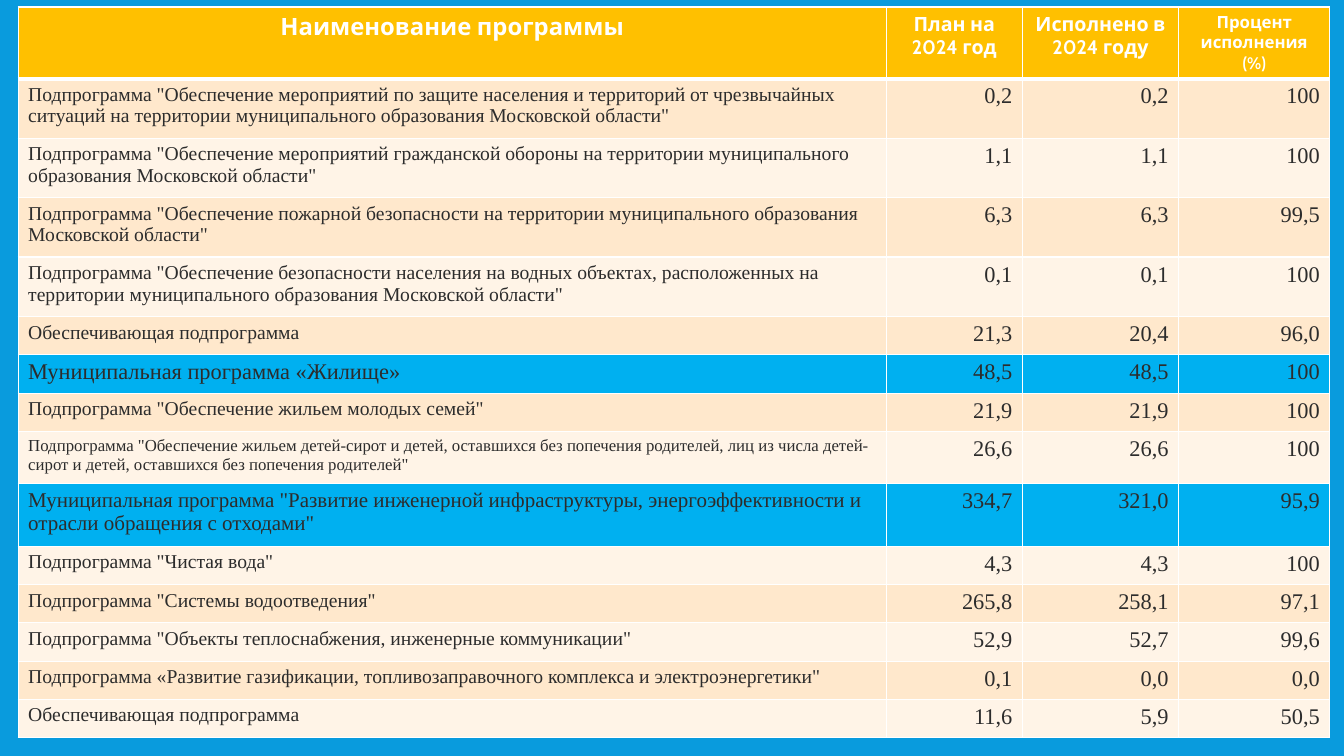
from lxml.etree import SubElement
from pptx import Presentation
from pptx.dml.color import RGBColor
from pptx.enum.text import PP_ALIGN
from pptx.oxml.ns import qn
from pptx.util import Inches, Pt

# Content: column heading, text size, column width
COLUMNS = [
    ("Наименование программы", 17, 8.61),
    ("План на 2024 год", 14, 1.35),
    ("Исполнено в 2024 году", 14, 1.55),
    ("Процент исполнения (%)", 12, 1.5),
]

# Content: name, plan, actual, percent, name size, row height
PROGRAMS = [
    ('Подпрограмма "Обеспечение мероприятий по защите населения и территорий от чрезвычайных '
     'ситуаций на территории муниципального образования Московской области"',
     "0,2", "0,2", "100", 14, 0.59),
    ('Подпрограмма "Обеспечение мероприятий гражданской обороны на территории муниципального '
     'образования Московской области"', "1,1", "1,1", "100", 14, 0.59),
    ('Подпрограмма "Обеспечение пожарной безопасности на территории муниципального образования '
     'Московской области"', "6,3", "6,3", "99,5", 14, 0.59),
    ('Подпрограмма "Обеспечение безопасности населения на водных объектах, расположенных на '
     'территории муниципального образования Московской области"',
     "0,1", "0,1", "100", 14, 0.59),
    ("Обеспечивающая подпрограмма", "21,3", "20,4", "96,0", 14, 0.38),
    ("Муниципальная программа «Жилище»", "48,5", "48,5", "100", 16, 0.38),
    ('Подпрограмма "Обеспечение жильем молодых семей"', "21,9", "21,9", "100", 14, 0.38),
    ('Подпрограмма "Обеспечение жильем детей-сирот и детей, оставшихся без попечения родителей, '
     'лиц из числа детей-сирот и детей, оставшихся без попечения родителей"',
     "26,6", "26,6", "100", 12, 0.52),
    ('Муниципальная программа "Развитие инженерной инфраструктуры, энергоэффективности и '
     'отрасли обращения с отходами"', "334,7", "321,0", "95,9", 15, 0.62),
    ('Подпрограмма "Чистая вода"', "4,3", "4,3", "100", 14, 0.38),
    ('Подпрограмма "Системы водоотведения"', "265,8", "258,1", "97,1", 14, 0.38),
    ('Подпрограмма "Объекты теплоснабжения, инженерные коммуникации"',
     "52,9", "52,7", "99,6", 14, 0.38),
    ('Подпрограмма «Развитие газификации, топливозаправочного комплекса и электроэнергетики"',
     "0,1", "0,0", "0,0", 14, 0.38),
    ("Обеспечивающая подпрограмма", "11,6", "5,9", "50,5", 14, 0.38),
]

HEADER_HEIGHT = 0.59
VALUE_SIZE = 16
BACKGROUND, HEADER_FILL, PROGRAM_FILL = "099BDD", "FFC000", "00B0F0"
BAND_FILLS = ("FFF4E7", "FFE8CC")
WHITE, INK = "FFFFFF", "2C2C2C"


def paint(fill, color):
    fill.solid()
    fill.fore_color.rgb = RGBColor.from_string(color)


def set_borders(cell, bottom_width):
    properties = cell._tc.get_or_add_tcPr()
    sides = [("a:lnL", 1), ("a:lnR", 1), ("a:lnT", 1), ("a:lnB", bottom_width)]
    for side, width in sides:
        line = SubElement(properties, qn(side), w=str(Pt(width)))
        SubElement(SubElement(line, qn("a:solidFill")), qn("a:srgbClr"), val=WHITE)


def fill_cell(cell, text, size, font_name, color, align, fill, bold=False, bottom_width=1):
    set_borders(cell, bottom_width)
    paint(cell.fill, fill)
    paragraph = cell.text_frame.paragraphs[0]
    paragraph.alignment = align
    run = paragraph.add_run()
    run.text = text
    run.font.size = Pt(size)
    run.font.name = font_name
    run.font.bold = bold
    run.font.color.rgb = RGBColor.from_string(color)


# Slide
prs = Presentation()
prs.slide_width, prs.slide_height = Inches(13.33), Inches(7.5)
slide = prs.slides.add_slide(prs.slide_layouts[6])
paint(slide.background.fill, BACKGROUND)

# Table grid
heights = [HEADER_HEIGHT] + [program[-1] for program in PROGRAMS]
budget = slide.shapes.add_table(
    len(heights), len(COLUMNS), Inches(0.18), Inches(0.07),
    Inches(sum(width for _, _, width in COLUMNS)), Inches(sum(heights))).table
for row, height in zip(budget.rows, heights):
    row.height = Inches(height)

# Header row
for index, (heading, size, width) in enumerate(COLUMNS):
    budget.columns[index].width = Inches(width)
    fill_cell(budget.cell(0, index), heading, size, "Cabin", WHITE, PP_ALIGN.CENTER,
              HEADER_FILL, bold=True, bottom_width=3)

# Program rows: whole programs stand out, subprograms alternate
for number, (name, *values, name_size, _) in enumerate(PROGRAMS, start=1):
    is_program = name.startswith("Муниципальная программа")
    fill = PROGRAM_FILL if is_program else BAND_FILLS[number % 2]
    for index, text in enumerate([name, *values]):
        size, align = (VALUE_SIZE, PP_ALIGN.RIGHT) if index else (name_size, PP_ALIGN.LEFT)
        fill_cell(budget.cell(number, index), text, size, "Times New Roman", INK, align, fill)

prs.save("out.pptx")
